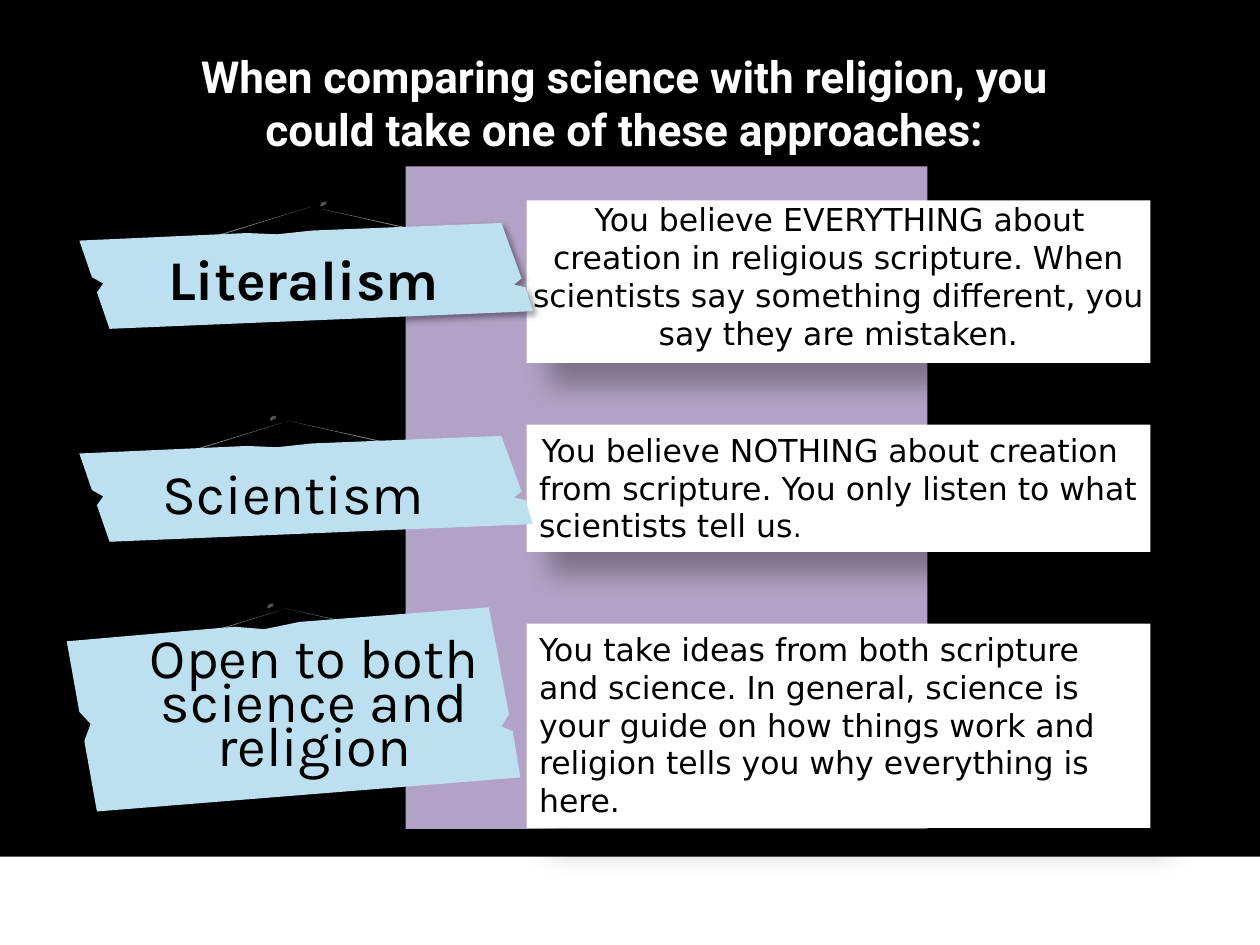
from lxml import etree
from pptx import Presentation
from pptx.dml.color import RGBColor
from pptx.enum.shapes import MSO_SHAPE
from pptx.enum.text import MSO_ANCHOR, MSO_AUTO_SIZE, PP_ALIGN
from pptx.oxml.ns import qn
from pptx.util import Inches, Pt

RECTANGLE = MSO_SHAPE.RECTANGLE
TOP = MSO_ANCHOR.TOP
GROW = MSO_AUTO_SIZE.SHAPE_TO_FIT_TEXT
NO_FIT = MSO_AUTO_SIZE.NONE
LEFT, CENTER = PP_ALIGN.LEFT, PP_ALIGN.CENTER

COLORS = {
    "black": "000000", "white": "FFFFFF", "purple": "B3A2C7",
    "board": "BDE0F1", "wire": "7C7E81", "glint": "515153",
}

# Outlines in inches, measured from the top left of each part
WIRE = [(0.89, 0), (0, 0.27), (0, 0.28), (0.89, 0), (1.94, 0.24), (1.95, 0.23)]
NAIL = [(0.26, 0.09), (0.13, 0.04), (0.14, 0.03), (0.13, 0.01), (0.11, 0),
        (0.09, 0), (0.06, 0), (0.04, 0.01), (0.01, 0.03), (0, 0.04),
        (0, 0.06), (0.02, 0.08), (0.06, 0.08), (0.09, 0.07), (0.11, 0.06)]
GLINT = [(0.05, 0.02), (0.03, 0.03), (0.01, 0.04), (0, 0.03),
         (0.01, 0.01), (0.03, 0), (0.05, 0)]
BOARD = [(3.51, 0.44), (3.45, 0.49), (3.54, 0.51), (3.6, 0.7), (0.24, 0.84),
         (0.14, 0.55), (0.19, 0.48), (0.1, 0.43), (0, 0.14), (1.33, 0.08),
         (1.57, 0.09), (1.85, 0.06), (3.35, 0)]
BOARD_HEIGHT = 0.84

# Shadows: opacity in percent, blur and distance in points
BOX_SHADOW = (30, 15, 18)
BOARD_SHADOW = (40, 4, 3)


class SlideBuilder:
    def __init__(self, deck):
        self.slide = deck.slides.add_slide(deck.slide_layouts[5])

    def paint(self, shape, color, shadow=None):
        shape.fill.solid()
        shape.fill.fore_color.rgb = RGBColor.from_string(COLORS[color])
        shape.line.fill.background()
        shape.shadow.inherit = False
        if shadow:
            opacity, blur, distance = shadow
            effects = shape.element.spPr.find(qn("a:effectLst"))
            outer = etree.SubElement(
                effects, qn("a:outerShdw"), blurRad=str(Pt(blur)),
                dist=str(Pt(distance)), dir=str(45 * 60000), algn="tl",
                rotWithShape="0")
            tone = etree.SubElement(outer, qn("a:srgbClr"), val=COLORS["black"])
            etree.SubElement(tone, qn("a:alpha"), val=str(opacity * 1000))

    def set_text(self, shape, text, font, size, color="black", bold=False,
                 align=CENTER, fit=GROW, inset=None):
        frame = shape.text_frame
        frame.word_wrap = True
        frame.auto_size = fit
        frame.vertical_anchor = TOP
        if inset is not None:
            frame.margin_left = frame.margin_right = Inches(inset)
            frame.margin_top = frame.margin_bottom = Inches(inset)
        para = frame.paragraphs[0]
        para.text = text
        para.alignment = align
        para.font.name = font
        para.font.size = Pt(size)
        para.font.bold = bold
        para.font.color.rgb = RGBColor.from_string(COLORS[color])
        return para

    def rectangle(self, left, top, width, height, color, shadow=None):
        box = self.slide.shapes.add_shape(
            RECTANGLE, Inches(left), Inches(top), Inches(width), Inches(height))
        self.paint(box, color, shadow)
        return box

    def title(self, text, left, top, width, height):
        title = self.slide.shapes.title
        title.left, title.top = Inches(left), Inches(top)
        title.width, title.height = Inches(width), Inches(height)
        self.set_text(title, text, "Roboto", 25.2, "white", True,
                      fit=NO_FIT, inset=0)
        # Bring the title in front of the panels
        title.element.getparent().append(title.element)

    def description(self, text, top, height, align=LEFT, indent=0.0,
                    fit=GROW, inset=None):
        box = self.rectangle(4.18, top, 4.95, height, "white", BOX_SHADOW)
        para = self.set_text(box, text, "DejaVu Sans", 18, align=align,
                             fit=fit, inset=inset)
        para.space_after = Pt(7)
        if indent:
            properties = para._p.get_or_add_pPr()
            properties.set("marL", "0")
            properties.set("indent", str(Inches(indent)))
        return para

    def outline(self, shapes, points, left, top, color, stretch=1, shadow=None):
        corners = [(Inches(left + x), Inches(top + y * stretch))
                   for x, y in points]
        builder = shapes.build_freeform(*corners[0])
        builder.add_line_segments(corners[1:], close=True)
        self.paint(builder.convert_to_shape(), color, shadow)

    def sign(self, text, wire, nail_left, glint_left, board, label,
             bold=False, grouped=True, spacing=None):
        shapes = self.slide.shapes
        if grouped:
            shapes = shapes.add_group_shape().shapes
        wire_left, wire_top = wire
        self.outline(shapes, WIRE, wire_left, wire_top, "wire")
        self.outline(shapes, NAIL, nail_left, wire_top - 0.05, "black")
        self.outline(shapes, GLINT, glint_left, wire_top - 0.04, "glint")
        board_left, board_top, board_height = board
        self.outline(shapes, BOARD, board_left, board_top, "board",
                     board_height / BOARD_HEIGHT,
                     None if grouped else BOARD_SHADOW)
        box = shapes.add_textbox(*(Inches(length) for length in label))
        para = self.set_text(box, text, "Karla", 32, bold=bold)
        if spacing:
            para.line_spacing = Pt(spacing)


def main():
    deck = Presentation()
    deck.slide_width, deck.slide_height = Inches(10), Inches(7.5)
    page = SlideBuilder(deck)

    # Panels and title
    page.rectangle(0, 0, 10, 6.8, "black")
    page.rectangle(3.22, 1.32, 4.14, 5.26, "purple")
    page.title("When comparing science with religion, you could take one of "
               "these approaches:", 1.14, 0.39, 7.63, 0.78)

    # Descriptions
    page.description(
        "You believe EVERYTHING about creation in religious scripture. When "
        "scientists say something different, you say they are mistaken.",
        1.59, 1.29, CENTER, 0.02, NO_FIT, 0)
    scientism = page.description(
        "You believe NOTHING about creation from scripture. You only listen "
        "to what scientists tell us", 3.37, 1.01, indent=0.02)
    full_stop = scientism.add_run()
    full_stop.text = "."
    full_stop.font.size = Pt(16)
    page.description(
        "You take ideas from both scripture and science. In general, science "
        "is your guide on how things work and religion tells you why "
        "everything is here.", 4.95, 1.62)

    # Hanging signs
    page.sign("Literalism", (1.58, 1.64), 2.47, 2.54, (0.63, 1.77, 0.84),
              (0.89, 1.89, 3.04, 0.64), bold=True, grouped=False)
    page.sign("Scientism", (1.4, 3.34), 2.1, 2.14, (0.63, 3.46, 0.84),
              (0.81, 3.59, 3.04, 0.64))
    page.sign("Open to both science and religion", (1.38, 4.83), 2.07, 2.12,
              (0.53, 4.82, 1.62), (0.81, 5.08, 3.37, 1.2), spacing=25)

    deck.save("out.pptx")


if __name__ == "__main__":
    main()
